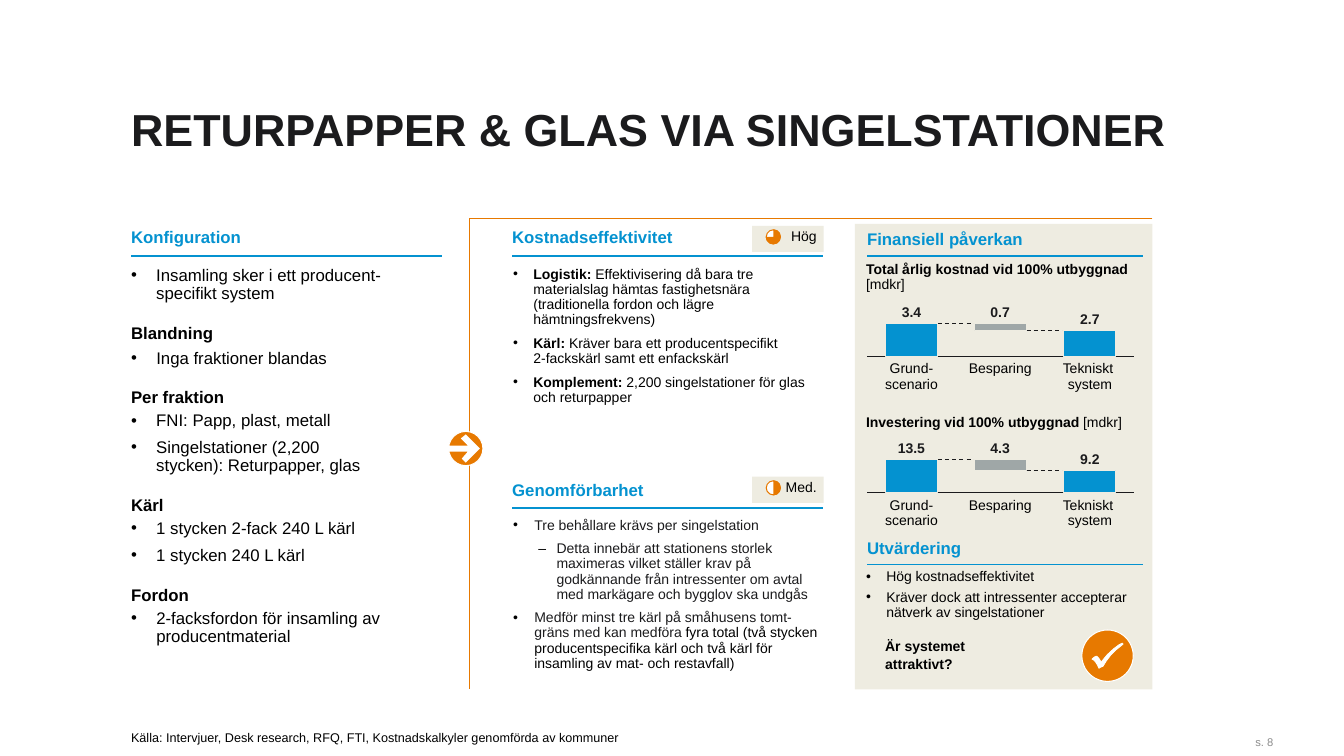
from dataclasses import dataclass

from lxml import etree
from pptx import Presentation
from pptx.chart.data import CategoryChartData
from pptx.dml.color import RGBColor
from pptx.enum.chart import XL_CHART_TYPE, XL_TICK_LABEL_POSITION, XL_TICK_MARK
from pptx.enum.dml import MSO_LINE
from pptx.enum.shapes import MSO_CONNECTOR, MSO_SHAPE
from pptx.enum.text import MSO_ANCHOR, PP_ALIGN
from pptx.oxml.ns import qn
from pptx.util import Inches, Pt

LEFT, CENTER, RIGHT = PP_ALIGN.LEFT, PP_ALIGN.CENTER, PP_ALIGN.RIGHT
TOP, MIDDLE, BOTTOM = MSO_ANCHOR.TOP, MSO_ANCHOR.MIDDLE, MSO_ANCHOR.BOTTOM
RECTANGLE, OVAL, ARC = MSO_SHAPE.RECTANGLE, MSO_SHAPE.OVAL, MSO_SHAPE.ARC


@dataclass(frozen=True)
class Theme:
    font: str = "Arial"
    black: RGBColor = RGBColor(0x00, 0x00, 0x00)
    ink: RGBColor = RGBColor(0x1B, 0x1B, 0x1D)
    blue: RGBColor = RGBColor(0x04, 0x92, 0xD0)
    orange: RGBColor = RGBColor(0xE7, 0x79, 0x00)
    grey: RGBColor = RGBColor(0x9F, 0xA7, 0xA7)
    page_grey: RGBColor = RGBColor(0x8C, 0x8C, 0x8C)
    beige: RGBColor = RGBColor(0xEE, 0xEC, 0xE1)
    white: RGBColor = RGBColor(0xFF, 0xFF, 0xFF)
    title: int = 32
    heading: int = 12
    body: int = 10
    source: int = 9
    page_number: int = 8


theme = Theme()
deck = Presentation()
deck.slide_width, deck.slide_height = Inches(13.33), Inches(7.5)
page = deck.slides.add_slide(deck.slide_layouts[6])


def write(at, *paragraphs, size=theme.body, color=theme.black, bold=False, align=LEFT,
          anchor=TOP, before=0, spacing=0.9, indent=0, wrap=True):
    """Add a text box. A paragraph is a string or a list of (text, format) spans.

    An indent makes bullets; a paragraph that opens with "– " is a dash one level down.
    """
    frame = page.shapes.add_textbox(*map(Inches, at)).text_frame
    frame.margin_left = frame.margin_right = frame.margin_top = frame.margin_bottom = 0
    frame.word_wrap, frame.vertical_anchor = wrap, anchor
    for index, spans in enumerate(paragraphs):
        para = frame.paragraphs[0] if index == 0 else frame.add_paragraph()
        para.alignment, para.line_spacing = align, spacing
        if index:
            para.space_before = Pt(before)
        if isinstance(spans, str):
            spans = [(spans, {})]
        dash = spans[0][0].startswith("– ")
        if dash:
            spans = [(spans[0][0][2:], {})]
            para.level = 1
        if indent:
            margin, hang, mark = (0.43, 0.18, "–") if dash else (indent, indent, "•")
            props = para._p.get_or_add_pPr()
            props.set("marL", str(Inches(margin)))
            props.set("indent", str(-Inches(hang)))
            bullet_color = etree.SubElement(props, qn("a:buClr"))
            etree.SubElement(bullet_color, qn("a:srgbClr")).set("val", str(theme.black))
            etree.SubElement(props, qn("a:buFont")).set("typeface", theme.font)
            etree.SubElement(props, qn("a:buChar")).set("char", mark)
        for text, look in spans:
            for line_index, line_text in enumerate(text.split("\n")):
                if line_index:
                    para.add_line_break()
                span = para.add_run()
                span.text = line_text
                span.font.name, span.font.size = theme.font, Pt(size)
                span.font.bold = look.get("bold", bold)
                span.font.color.rgb = look.get("color", color)


def paint(shape, fill=None, line=None, width=0.75):
    shape.shadow.inherit = False
    if fill is None:
        shape.fill.background()
    else:
        shape.fill.solid()
        shape.fill.fore_color.rgb = fill
    if line is None:
        shape.line.fill.background()
    else:
        shape.line.color.rgb = line
        shape.line.width = Pt(width)


# Panel, rating boxes, round badges
ratings = [(2.24, 2.28, "Hög", 108), (4.73, 4.77, "Med.", 54)]
marks = [(RECTANGLE, (8.48, 2.22, 2.95, 4.62), theme.beige, None)]
for box_top, pie_top, _, _ in ratings:
    marks += [(RECTANGLE, (7.46, box_top, 0.71, 0.26), theme.beige, None),
              (OVAL, (7.6, pie_top, 0.14, 0.14), theme.white, theme.orange)]
for kind, at, fill, line in marks:
    paint(page.shapes.add_shape(kind, *map(Inches, at)), fill, line)
for _, pie_top, label, end_angle in ratings:
    pie = page.shapes.add_shape(ARC, *map(Inches, (7.6, pie_top, 0.14, 0.14)))
    pie.adjustments[0], pie.adjustments[1] = 162, end_angle
    paint(pie, theme.orange, theme.orange)
    write((7.79, pie_top, 0.31, 0.15), label, align=RIGHT)

# Heading rules and the dashed steps between the bars
charts = [(3.12, 78, ("3.4", "0.7", "2.7")), (4.47, 68, ("13.5", "4.3", "9.2"))]
rules = [(left, y, width, theme.blue, False) for left, y, width in [
    (1.3, 2.54, 3.08), (5.08, 2.54, 3.08), (5.08, 5.04, 3.08),
    (8.6, 2.54, 2.74), (8.6, 5.6, 2.74)]]
for top, remaining, _ in charts:
    drop = 0.33 * (100 - remaining) / 100
    rules += [(9.3, top + 0.09, 0.36, theme.ink, True),
              (10.18, top + 0.09 + drop, 0.36, theme.ink, True)]
for left, y, width, color, dashed in rules:
    rule = page.shapes.add_connector(
        MSO_CONNECTOR.STRAIGHT, Inches(left), Inches(y), Inches(left + width), Inches(y))
    rule.line.color.rgb, rule.line.width = color, Pt(0.75)
    if dashed:
        rule.line.dash_style = MSO_LINE.DASH
    etree.SubElement(rule._element.spPr, qn("a:effectLst"))

# Waterfall charts
for top, remaining, values in charts:
    data = CategoryChartData()
    data.categories = ["1", "2", "3"]
    data.add_series("Series 1", (100, remaining, remaining))
    data.add_series("Series 2", (None, 100 - remaining, None))
    chart = page.shapes.add_chart(
        XL_CHART_TYPE.COLUMN_STACKED, *map(Inches, (8.51, top, 2.83, 0.51)), data).chart
    chart.has_legend = chart.has_title = False
    chart.font.name, chart.font.size = theme.font, Pt(theme.body)
    chart.font.color.rgb = theme.ink
    plot = chart.plots[0]
    plot.gap_width, plot.overlap, plot.vary_by_categories = 70, 100, False
    for series, color in zip(plot.series, (theme.blue, theme.grey)):
        series.format.fill.solid()
        series.format.fill.fore_color.rgb = color
        series.format.line.color.rgb = theme.beige
        series.format.line.width = Pt(0.75)
    base = plot.series[0].points[1].format
    base.fill.background()
    base.line.fill.background()
    axis = chart.category_axis
    axis.tick_label_position = XL_TICK_LABEL_POSITION.NONE
    axis.major_tick_mark = axis.minor_tick_mark = XL_TICK_MARK.NONE
    axis.format.line.color.rgb, axis.format.line.width = theme.ink, Pt(0.75)
    scale = chart.value_axis
    scale.minimum_scale, scale.maximum_scale = 0, 100
    scale.has_major_gridlines = scale.visible = False

    area = chart.element.chart.plotArea
    for old_layout in area.findall(qn("c:layout")):
        area.remove(old_layout)
    layout = etree.Element(qn("c:layout"))
    area.insert(0, layout)
    manual = etree.SubElement(layout, qn("c:manualLayout"))
    for tag, value in [("layoutTarget", "inner"), ("xMode", "edge"), ("yMode", "edge"),
                       ("x", "0.032"), ("y", "0.176"), ("w", "0.936"), ("h", "0.647")]:
        etree.SubElement(manual, qn(f"c:{tag}")).set("val", value)

    drop = 0.33 * (100 - remaining) / 100
    columns = [(9.04, "Grund-\nscenario", 0), (9.92, "Besparing", 0),
               (10.81, "Tekniskt \nsystem", drop)]
    for (middle, label, lower), value in zip(columns, values):
        write((middle - 0.2, top - 0.09 + lower, 0.4, 0.15), value, color=theme.ink,
              bold=True, align=CENTER, anchor=BOTTOM, wrap=False)
        write((middle - 0.42, top + 0.47, 0.84, 0.3), label, align=CENTER, wrap=False)

# Title, headings, source and page number
write((1.3, 1.01, 10.85, 0.63), "RETURPAPPER & GLAS VIA SINGELSTATIONER",
      size=theme.title, color=theme.ink, bold=True, spacing=1)
for left, top, heading in [
        (1.3, 2.27, "Konfiguration"), (5.08, 2.27, "Kostnadseffektivitet"),
        (5.08, 4.78, "Genomförbarhet"), (8.6, 2.29, "Finansiell påverkan"),
        (8.6, 5.36, "Utvärdering")]:
    write((left, top, 2.74, 0.18), heading, size=theme.heading, color=theme.blue, bold=True)
write((1.3, 7.25, 4.89, 0.14),
      "Källa: Intervjuer, Desk research, RFQ, FTI, Kostnadskalkyler genomförda av kommuner",
      size=theme.source, anchor=BOTTOM, wrap=False)
write((11.4, 7.26, 1.23, 0.2), "s. 8", size=theme.page_number, color=theme.page_grey,
      align=RIGHT, anchor=MIDDLE, spacing=1)

# Configuration column
for top, heading in [(3.22, "Blandning"), (3.86, "Per fraktion"), (4.93, "Kärl"),
                     (5.82, "Fordon")]:
    write((1.3, top, 1, 0.18), heading, size=theme.heading, bold=True)
for top, width, items in [
        (2.65, 2.56, ["Insamling sker i ett producent-specifikt system"]),
        (3.47, 2.89, ["Inga fraktioner blandas"]),
        (4.09, 2.36, ["FNI: Papp, plast, metall",
                      "Singelstationer (2,200 stycken): Returpapper, glas"]),
        (5.16, 2.86, ["1 stycken 2-fack 240 L kärl", "1 stycken 240 L kärl"]),
        (6.05, 2.89, ["2-facksfordon för insamling av producentmaterial"])]:
    write((1.3, top, width, 0.36), *items, size=theme.heading, before=6, indent=0.25)

# Effectiveness, feasibility, finances and evaluation
strong = {"bold": True}
write((5.09, 2.65, 3.05, 1.38),
      [("Logistik: ", strong), ("Effektivisering då bara tre materialslag hämtas fastighetsnära "
                                "(traditionella fordon och lägre hämtningsfrekvens)", {})],
      [("Kärl: ", strong),
       ("Kräver bara ett producentspecifikt \n2-fackskärl samt ett enfackskärl", {})],
      [("Komplement: ", strong), ("2,200 singelstationer för glas och returpapper", {})],
      before=6, indent=0.2)
write((5.09, 5.14, 3.05, 1.53), "Tre behållare krävs per singelstation",
      "– Detta innebär att stationens storlek maximeras vilket ställer krav på godkännande "
      "från intressenter om avtal med markägare och bygglov ska undgås",
      [("Medför minst tre kärl på småhusens tomt-gräns med kan medföra ", {}),
       ("fyra total (två stycken producentspecifika kärl och två kärl för insamling av "
        "mat- och restavfall)", {"color": theme.black})],
      color=theme.ink, before=6, indent=0.21)
for top, caption in [(2.6, "Total årlig kostnad vid 100% utbyggnad "),
                     (4.12, "Investering vid 100% utbyggnad ")]:
    write((8.59, top, 2.79, 0.3), [(caption, strong), ("[mdkr]", {})])
write((8.59, 5.65, 2.79, 0.72), "Hög kostnadseffektivitet",
      "Kräver dock att intressenter accepterar nätverk av singelstationer",
      before=4, indent=0.2)
write((8.78, 6.34, 1.86, 0.33), "Är systemet", "attraktivt?", bold=True, before=2)

# Frame line, arrow badge and check badge
frame_line = [(11.43, 2.17), (4.66, 2.17), (4.66, 6.84)]
arrow = [(4.62, 4.31), (4.76, 4.45), (4.62, 4.59), (4.58, 4.55), (4.64, 4.48),
         (4.44, 4.48), (4.44, 4.42), (4.64, 4.42), (4.57, 4.35)]
check = [(10.83, 6.54)]
for curve in [((10.85, 6.52), (10.86, 6.51), (10.88, 6.51)),
              ((10.89, 6.52), (10.91, 6.54), (10.92, 6.57)),
              ((11.0, 6.46), (11.1, 6.39), (11.13, 6.38)),
              ((11.13, 6.38), (11.13, 6.38), (11.14, 6.39)),
              ((11.03, 6.47), (10.98, 6.54), (10.94, 6.61)),
              ((10.92, 6.62), (10.91, 6.62), (10.9, 6.63)),
              ((10.88, 6.58), (10.85, 6.54), (10.83, 6.54))]:
    corners = (check[-1], *curve)
    for t in (0.25, 0.5, 0.75, 1):
        weights = ((1 - t) ** 3, 3 * t * (1 - t) ** 2, 3 * t * t * (1 - t), t ** 3)
        check.append(tuple(sum(w * c[k] for w, c in zip(weights, corners)) for k in (0, 1)))
for points, badge, fill, line, width in [
        (frame_line, None, None, theme.orange, 1),
        (arrow, (4.45, 4.28, 0.34, 0.34), theme.white, None, 0),
        (check, (10.73, 6.25, 0.51, 0.51), theme.white, theme.white, 0.5)]:
    if badge:
        paint(page.shapes.add_shape(OVAL, *map(Inches, badge)), theme.orange, theme.white)
    start, *others = [(Inches(x), Inches(y)) for x, y in points]
    outline = page.shapes.build_freeform(*start)
    outline.add_line_segments(others, close=badge is not None)
    paint(outline.convert_to_shape(), fill, line, width)

deck.save("out.pptx")
